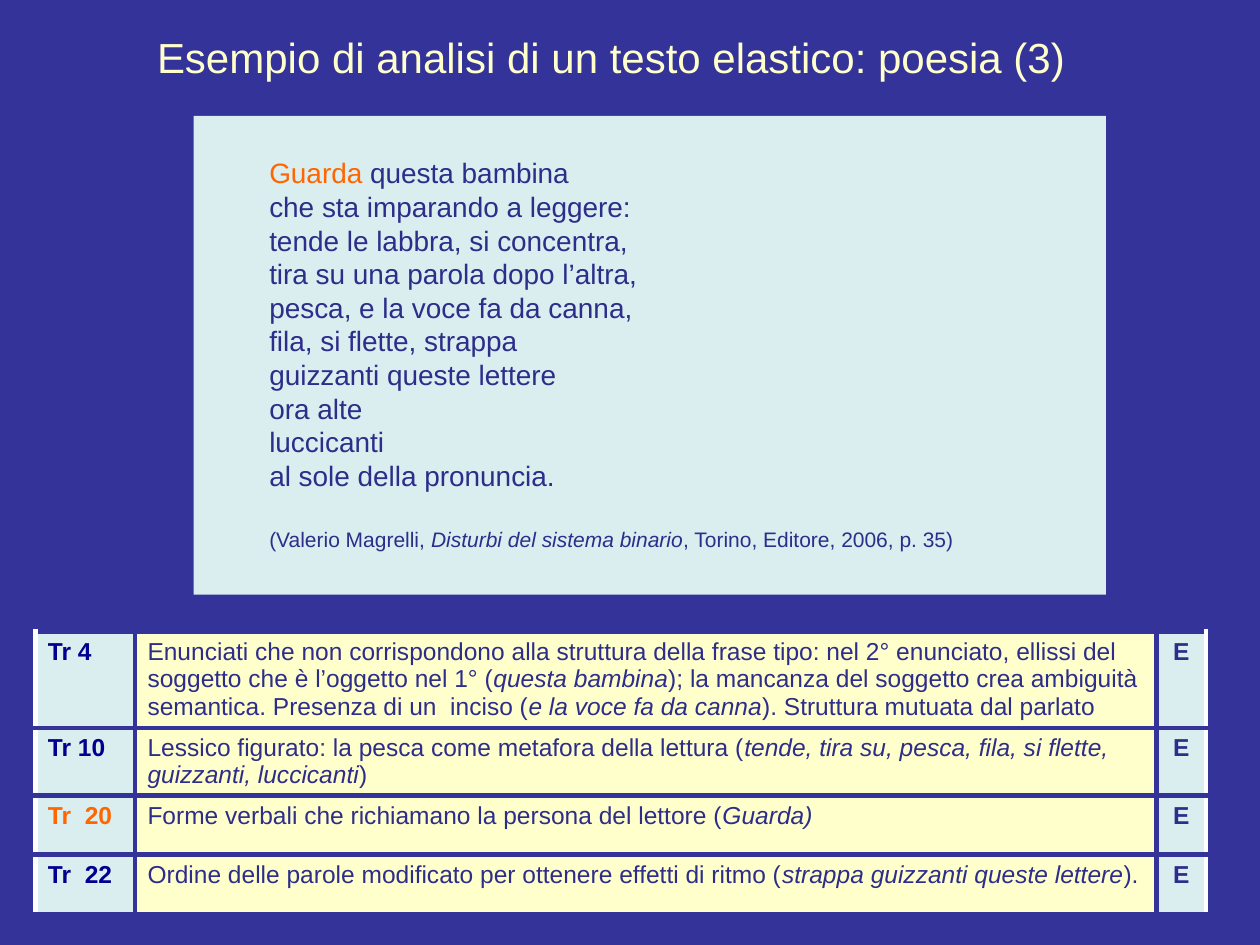
"""Build the slide that analyses a poem as an elastic text."""
import dataclasses

import pptx
import pptx.dml.color
import pptx.enum.shapes
import pptx.enum.text
import pptx.oxml
import pptx.oxml.ns
import pptx.util

Pt = pptx.util.Pt
ALIGN = pptx.enum.text.PP_ALIGN
ANCHOR = pptx.enum.text.MSO_ANCHOR


@dataclasses.dataclass(frozen=True)
class Theme:
    font: str = "Arial"
    background: str = "333399"
    cream: str = "FFFFCC"
    pale: str = "DAEDEF"
    ink: str = "2D2D8A"
    label: str = "000090"
    accent: str = "FF6600"
    edge: str = "FFFFFF"
    title_size: int = 24
    poem_size: int = 16
    table_size: int = 14
    source_size: int = 12


THEME = Theme()

POEM = [
    "che sta imparando a leggere:",
    "tende le labbra, si concentra,",
    "tira su una parola dopo l’altra,",
    "pesca, e la voce fa da canna,",
    "fila, si flette, strappa",
    "guizzanti queste lettere",
    "ora alte",
    "luccicanti",
    "al sole della pronuncia.",
]
SOURCE = ["(Valerio Magrelli, ", "Disturbi del sistema binario", ", Torino, Editore, 2006, p. 35)"]

TRAITS = [
    ("Tr 4", THEME.label, 55, [
        "Enunciati che non corrispondono alla struttura della frase tipo: nel 2° enunciato, "
        "ellissi del soggetto che è l’oggetto nel 1° (",
        "questa bambina",
        "); la mancanza del soggetto crea ambiguità semantica. Presenza di un  inciso (",
        "e la voce fa da canna",
        "). Struttura mutuata dal parlato"]),
    ("Tr 10", THEME.label, 38.5, [
        "Lessico figurato: la pesca come metafora della lettura (",
        "tende, tira su, pesca, fila, si flette, guizzanti, luccicanti",
        ")"]),
    ("Tr  20", THEME.accent, 33.84, [
        "Forme verbali che richiamano la persona del lettore (", "Guarda)"]),
    ("Tr  22", THEME.label, 33.84, [
        "Ordine delle parole modificato per ottenere effetti di ritmo (",
        "strappa guizzanti queste lettere",
        ")."]),
]
COLUMN_WIDTHS = [56.9, 583.9, 28.1]


def rgb(value):
    return pptx.dml.color.RGBColor.from_string(value)


def add_span(para, text, size, color=THEME.ink, bold=False, italic=False):
    span = para.add_run()
    span.text = text
    span.font.name = THEME.font
    span.font.size = Pt(size)
    span.font.color.rgb = rgb(color)
    span.font.bold = bold
    span.font.italic = italic


def add_alternating(para, texts, size):
    for index, text in enumerate(texts):
        add_span(para, text, size, italic=index % 2 == 1)


def set_title(page, text):
    title = page.shapes.title
    title.left, title.top, title.width, title.height = Pt(25.2), Pt(9.4), Pt(648), Pt(45.4)
    frame = title.text_frame
    frame.vertical_anchor = ANCHOR.MIDDLE
    para = frame.paragraphs[0]
    para.alignment = ALIGN.CENTER
    add_span(para, text, THEME.title_size, THEME.cream)


def add_poem(page):
    box = page.shapes.add_shape(
        pptx.enum.shapes.MSO_SHAPE.RECTANGLE, Pt(110.7), Pt(66.2), Pt(521.3), Pt(273.6))
    box.shadow.inherit = False
    box.fill.solid()
    box.fill.fore_color.rgb = rgb(THEME.pale)
    box.line.fill.background()
    frame = box.text_frame
    frame.word_wrap = True
    frame.vertical_anchor = ANCHOR.TOP
    frame.margin_left, frame.margin_top = Pt(43.2), Pt(23)
    opening = frame.paragraphs[0]
    add_span(opening, "Guarda ", THEME.poem_size, THEME.accent)
    add_span(opening, "questa bambina", THEME.poem_size)
    for verse in POEM:
        add_span(frame.add_paragraph(), verse, THEME.poem_size)
    source = frame.add_paragraph()
    source.space_before = Pt(15)
    add_alternating(source, SOURCE, THEME.source_size)
    for para in frame.paragraphs:
        para.alignment = ALIGN.LEFT
        para.line_spacing = Pt(19.2)


def set_borders(cell, left, right):
    properties = cell._tc.get_or_add_tcPr()
    sides = {"lnL": left, "lnR": right, "lnT": THEME.background, "lnB": THEME.background}
    for index, (side, color) in enumerate(sides.items()):
        properties.insert(index, pptx.oxml.parse_xml(
            f'<a:{side} {pptx.oxml.ns.nsdecls("a")} w="{Pt(3)}"><a:solidFill>'
            f'<a:srgbClr val="{color}"/></a:solidFill></a:{side}>'))


def format_cell(cell, fill, left=THEME.background, right=THEME.background):
    cell.fill.solid()
    cell.fill.fore_color.rgb = rgb(fill)
    set_borders(cell, left, right)


def add_traits(page):
    heights = [trait[2] for trait in TRAITS]
    table = page.shapes.add_table(
        len(TRAITS), len(COLUMN_WIDTHS), Pt(20.2), Pt(360.9),
        Pt(sum(COLUMN_WIDTHS)), Pt(sum(heights))).table
    table.first_row = table.horz_banding = False
    for column, width in zip(table.columns, COLUMN_WIDTHS):
        column.width = Pt(width)
    for row, (name, color, height, texts) in zip(table.rows, TRAITS):
        row.height = Pt(height)
        label, description, mark = row.cells
        format_cell(label, THEME.pale, left=THEME.edge)
        format_cell(description, THEME.cream)
        format_cell(mark, THEME.pale, right=THEME.edge)
        add_span(label.text_frame.paragraphs[0], name, THEME.table_size, color, bold=True)
        add_alternating(description.text_frame.paragraphs[0], texts, THEME.table_size)
        para = mark.text_frame.paragraphs[0]
        para.alignment = ALIGN.CENTER
        add_span(para, "E", THEME.table_size, bold=True)


def main():
    deck = pptx.Presentation()
    deck.slide_width, deck.slide_height = Pt(720), Pt(540)
    page = deck.slides.add_slide(deck.slide_layouts.get_by_name("Title Only"))
    page.background.fill.solid()
    page.background.fill.fore_color.rgb = rgb(THEME.background)
    set_title(page, "Esempio di analisi di un testo elastico: poesia (3)")
    add_traits(page)
    add_poem(page)
    deck.save("out.pptx")


if __name__ == "__main__":
    main()
